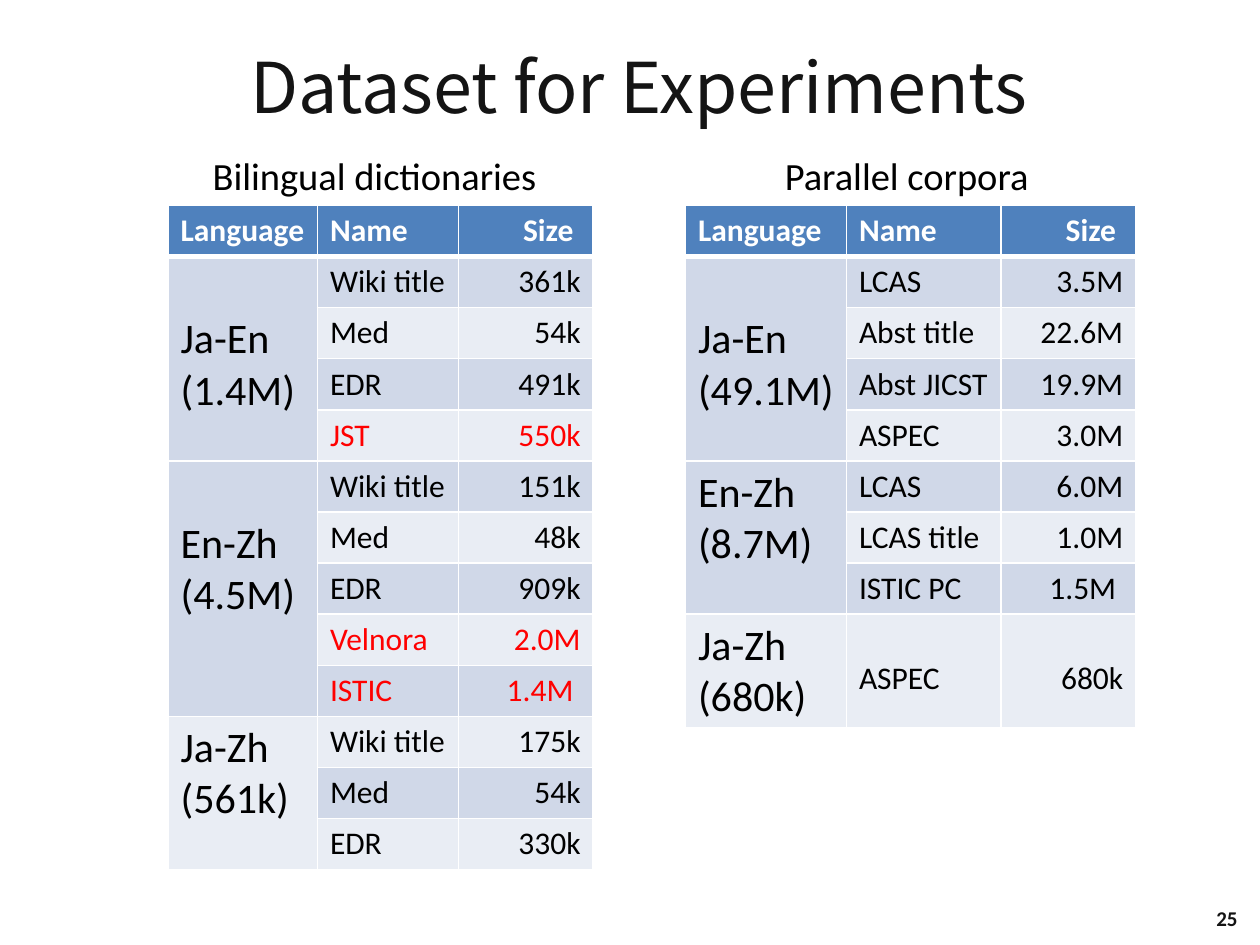
from lxml.etree import SubElement as Sub
from pptx import Presentation
from pptx.dml.color import RGBColor as Rgb
from pptx.enum.text import MSO_ANCHOR as Anchor, PP_ALIGN as Align
from pptx.oxml.ns import qn
from pptx.util import Pt

WHITE = Rgb(0xFF, 0xFF, 0xFF)
BLACK = Rgb(0x00, 0x00, 0x00)
INK = Rgb(0x14, 0x14, 0x14)
RED = Rgb(0xFF, 0x00, 0x00)
HEAD = Rgb(0x4F, 0x81, 0xBD)
BANDS = (Rgb(0xD0, 0xD8, 0xE8), Rgb(0xE9, 0xED, 0xF4))

FONT = "Calibri"
ROW = 29.2
TALL = 65
PAD = 3.6

# Each group: language, total, space above the language, rows of name and size
DICTS = [
    ("Ja-En", "(1.4M)", 29.3, [("Wiki title", "361k"), ("Med", "54k"),
                               ("EDR", "491k"), ("JST", "550k")]),
    ("En-Zh", "(4.5M)", 29.3, [("Wiki title", "151k"), ("Med", "48k"),
                               ("EDR", "909k"), ("Velnora", "2.0M"),
                               ("ISTIC", "1.4M ")]),
    ("Ja-Zh", "(561k)", 0, [("Wiki title", "175k"), ("Med", "54k"),
                            ("EDR", "330k")]),
]
CORPORA = [
    ("Ja-En", "(49.1M)", 29.3, [("LCAS", "3.5M"), ("Abst title", "22.6M"),
                                ("Abst JICST", "19.9M"), ("ASPEC", "3.0M")]),
    ("En-Zh", "(8.7M)", 0, [("LCAS", "6.0M"), ("LCAS title", "1.0M"),
                            ("ISTIC PC", "1.5M ")]),
    ("Ja-Zh", "(680k)", 0, [("ASPEC", "680k")]),
]
MARKED = {"JST", "Velnora", "ISTIC"}


def add_run(para, text, size, color, bold=False, font=FONT, align=Align.LEFT):
    para.alignment = align
    run = para.add_run()
    run.text = text
    run.font.name = font
    run.font.size = Pt(size)
    run.font.bold = bold
    run.font.color.rgb = color


def add_title(slide, text):
    title = slide.shapes.title
    title.left, title.top = Pt(46), Pt(26)
    title.width, title.height = Pt(638), Pt(45.4)
    frame = title.text_frame
    frame.vertical_anchor = Anchor.MIDDLE
    add_run(frame.paragraphs[0], text, 40, INK,
            font="Noto Sans CJK JP", align=Align.CENTER)


def add_label(slide, text, box, size, color, bold=False, align=Align.LEFT):
    frame = slide.shapes.add_textbox(*map(Pt, box)).text_frame
    frame.word_wrap = False
    frame.vertical_anchor = Anchor.MIDDLE
    add_run(frame.paragraphs[0], text, size, color, bold, align=align)


def style_cell(cell, fill, top=1, base=1):
    """Set white borders, with their top and base widths, and then the fill."""
    props = cell._tc.get_or_add_tcPr()
    for side, width in zip("LRTB", (1, 1, top, base)):
        line = Sub(props, qn(f"a:ln{side}"), w=str(Pt(width)))
        Sub(Sub(line, qn("a:solidFill")), qn("a:srgbClr"), val=str(WHITE))
    cell.fill.solid()
    cell.fill.fore_color.rgb = fill


def fill_row(table, row, name, size, drop):
    color = RED if name in MARKED else BLACK
    for col, text, align in ((1, name, Align.LEFT), (2, size, Align.RIGHT)):
        cell = table.cell(row, col)
        cell.margin_top = Pt(PAD + drop)
        add_run(cell.text_frame.paragraphs[0], text, 18, color, align=align)


def fill_group(table, row, group):
    lang, total, drop, items = group
    cell = table.cell(row, 0)
    if len(items) > 1:
        cell.merge(table.cell(row + len(items) - 1, 0))
    else:
        table.rows[row].height = Pt(TALL)
    cell.margin_top = Pt(PAD + drop)
    cell.margin_right = Pt(PAD)
    frame = cell.text_frame
    add_run(frame.paragraphs[0], lang, 24, BLACK)
    add_run(frame.add_paragraph(), total, 24, BLACK)
    for step, (name, size) in enumerate(items):
        fill_row(table, row + step, name, size, 22 if len(items) == 1 else 0)


def add_data(slide, left, widths, groups):
    count = 1 + sum(len(group[3]) for group in groups)
    table = slide.shapes.add_table(
        count, 3, Pt(left), Pt(117.4), Pt(sum(widths)), Pt(ROW * count)).table
    for col, width in zip(table.columns, widths):
        col.width = Pt(width)
    for row in range(count):
        table.rows[row].height = Pt(ROW)
        for col in range(3):
            fill = BANDS[(row - 1) % 2] if row else HEAD
            style_cell(table.cell(row, col), fill,
                       top=3 if row == 1 else 1, base=1 if row else 3)
    for col, text in enumerate(("Language", "Name", "Size ")):
        add_run(table.cell(0, col).text_frame.paragraphs[0], text, 18, WHITE,
                True, align=Align.RIGHT if col == 2 else Align.LEFT)
    row = 1
    for group in groups:
        fill_group(table, row, group)
        row += len(group[3])


def main():
    deck = Presentation()
    deck.slide_width, deck.slide_height = Pt(720), Pt(540)
    slide = deck.slides.add_slide(deck.slide_layouts[5])
    add_title(slide, "Dataset for Experiments")
    add_data(slide, 96, (85.4, 80.6, 77), DICTS)
    add_label(slide, "25", (682.6, 510.5, 31.7, 28.8), 12, INK, True,
              Align.RIGHT)
    add_data(slide, 391.7, (92, 88.4, 77), CORPORA)
    add_label(slide, "Bilingual dictionaries", (114.5, 83, 201.6, 33.8),
              22, BLACK)
    add_label(slide, "Parallel corpora", (441.4, 83, 157, 33.8), 22, BLACK)
    deck.save("out.pptx")


if __name__ == "__main__":
    main()
